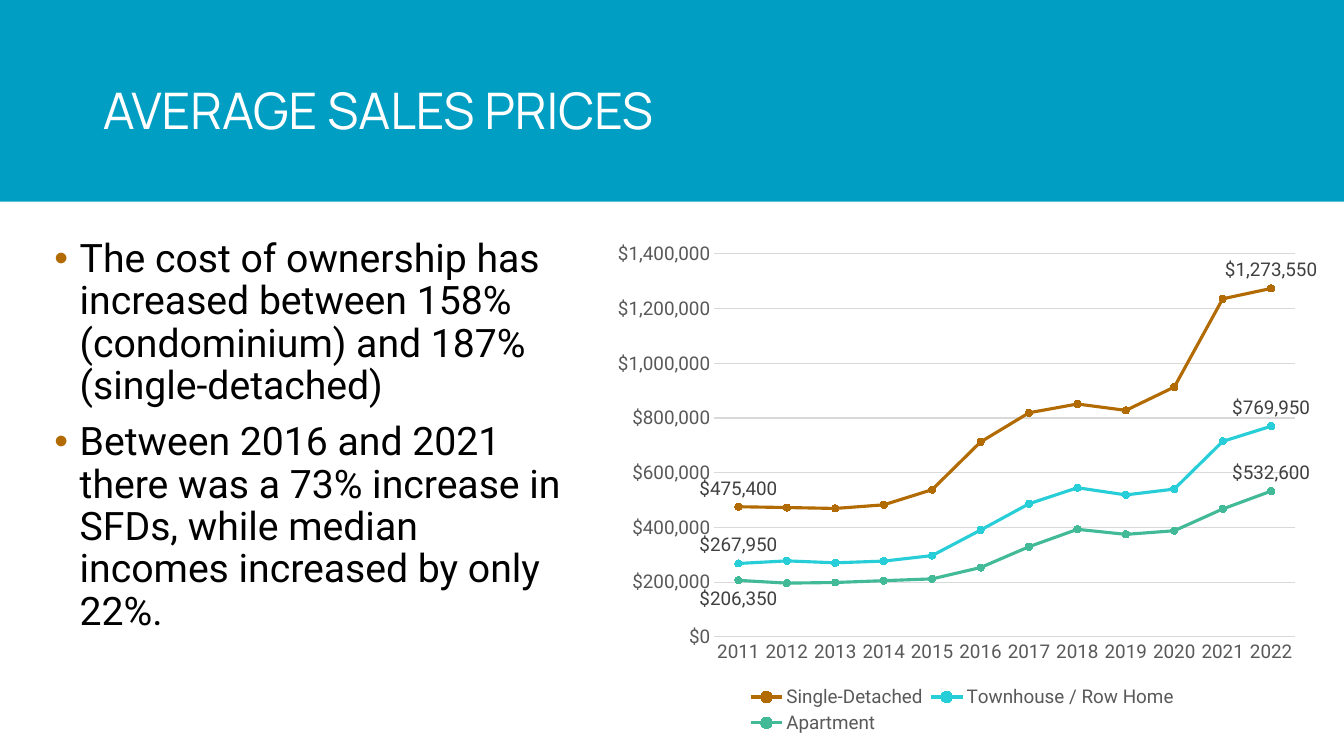
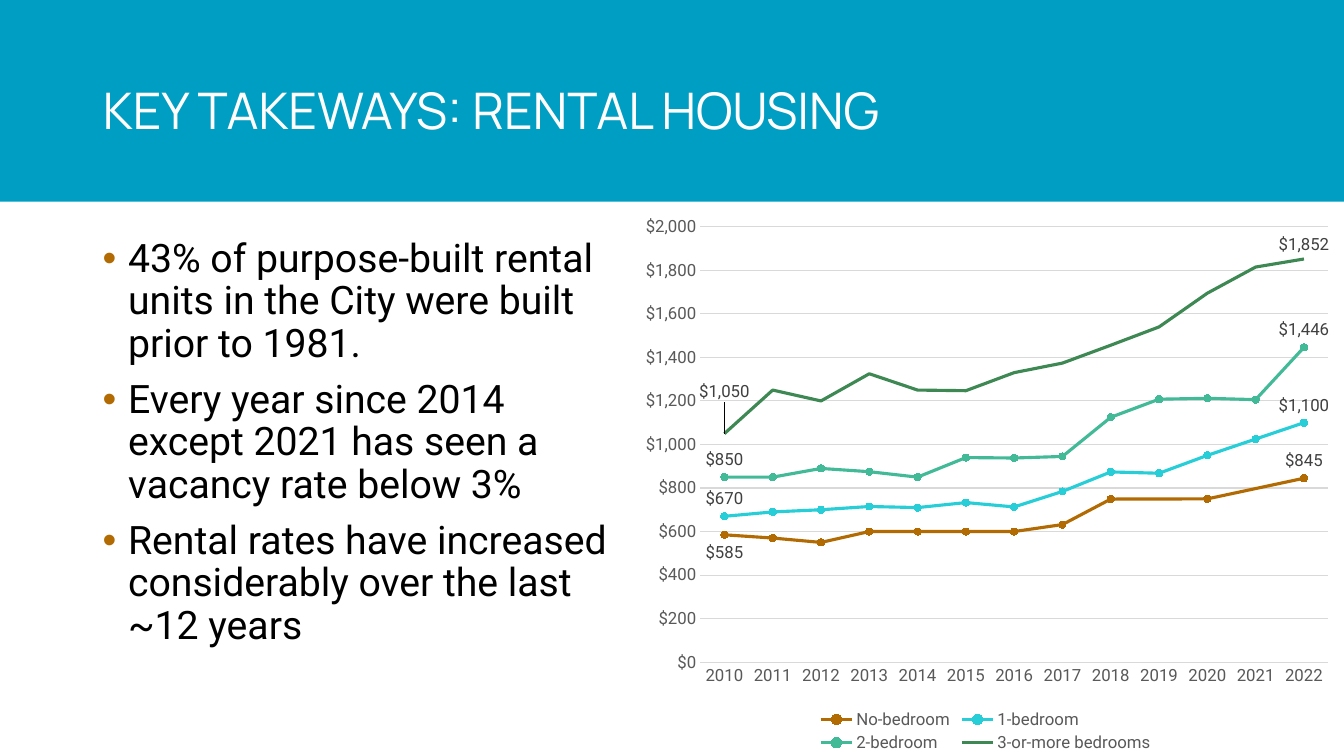
"""Build two housing slides, each with a bullet list and a line chart."""
import dataclasses
import typing

import pptx
import pptx.chart.data
import pptx.dml.color
import pptx.enum.chart
import pptx.enum.shapes
import pptx.enum.text
import pptx.oxml
import pptx.oxml.ns
import pptx.util

Cm = pptx.util.Cm
Pt = pptx.util.Pt
LabelPosition = pptx.enum.chart.XL_LABEL_POSITION
TickMark = pptx.enum.chart.XL_TICK_MARK
MarkerStyle = pptx.enum.chart.XL_MARKER_STYLE

COLORS = {
    "band": "009EC2",
    "title": "FFFFFF",
    "body": "000000",
    "ochre": "B26B02",
    "cyan": "27CED7",
    "teal": "42BA97",
    "green": "3E8853",
    "axis": "595959",
    "label": "404040",
    "grid": "D9D9D9",
}
TITLE_FONT = "Manrope"
BODY_FONT = "Roboto"
DOLLARS = '"$"#,##0'
SLIDE_WIDTH, SLIDE_HEIGHT = 33.87, 19.05


class Box(typing.NamedTuple):
    left: float
    top: float
    width: float
    height: float

    def lengths(self) -> list[pptx.util.Length]:
        return [Cm(value) for value in self]


@dataclasses.dataclass(frozen=True)
class PriceLine:
    name: str
    values: list[int | None]
    color: str
    first_label: LabelPosition = LabelPosition.ABOVE
    first_label_shift: float = 0
    has_markers: bool = True


@dataclasses.dataclass(frozen=True)
class PriceChart:
    box: Box
    plot: Box
    legend: Box
    first_year: int
    maximum: int
    step: int
    size: float
    lines: list[PriceLine]


@dataclasses.dataclass(frozen=True)
class Topic:
    title: str
    title_box: Box
    points_box: Box
    points: list[str]
    prices: PriceChart


TOPICS = [
    Topic(
        "AVERAGE SALES PRICES",
        Box(2.34, 1.02, 22.76, 3.68),
        Box(1.12, 5.89, 13.41, 12.7),
        [
            "The cost of ownership has increased between 158% (condominium) and 187% (single-detached)",
            "Between 2016 and 2021 there was a 73% increase in SFDs, while median incomes increased by only 22%.",
        ],
        PriceChart(
            Box(15.32, 5.89, 17.88, 12.7),
            Box(0.15, 0.04, 0.82, 0.76),
            Box(0.19, 0.89, 0.62, 0.11),
            2011, 1400000, 200000, 13.5,
            [
                PriceLine("Single-Detached",
                          [475400, 472600, 469150, 482450, 537800, 712400, 819050,
                           851150, 827750, 913050, 1235650, 1273550], "ochre"),
                PriceLine("Townhouse / Row Home",
                          [267950, 277600, 270450, 276750, 296900, 390150, 486300,
                           544950, 518650, 540050, 714550, 769950], "cyan"),
                PriceLine("Apartment",
                          [206350, 196200, 198550, 205200, 211750, 253150, 329300,
                           392850, 374450, 387700, 467350, 532600], "teal",
                          first_label=LabelPosition.BELOW),
            ],
        ),
    ),
    Topic(
        "KEY TAKEWAYS: RENTAL HOUSING",
        Box(2.34, 1.02, 20.93, 3.68),
        Box(2.34, 5.89, 13.23, 10.92),
        [
            "43% of purpose-built rental units in the City were built prior to 1981.",
            "Every year since 2014 except 2021 has seen a vacancy rate below 3%",
            "Rental rates have increased considerably over the last ~12 years",
        ],
        PriceChart(
            Box(15.85, 5.16, 17.98, 13.89),
            Box(0.1, 0.04, 0.88, 0.79),
            Box(0.26, 0.91, 0.48, 0.09),
            2010, 2000, 200, 12,
            [
                PriceLine("No-bedroom",
                          [585, 570, 550, 600, 600, 600, 600, 632, 749, None, 750, None, 845],
                          "ochre", first_label=LabelPosition.BELOW),
                PriceLine("1-bedroom",
                          [670, 690, 700, 715, 710, 733, 713, 784, 874, 868, 950, 1025, 1100],
                          "cyan"),
                PriceLine("2-bedroom",
                          [850, 850, 890, 875, 850, 940, 938, 945, 1125, 1208, 1212, 1206, 1446],
                          "teal"),
                PriceLine("3-or-more bedrooms",
                          [1050, 1250, 1200, 1325, 1250, 1247, 1330, 1374, 1456, 1540, 1695, 1815, 1852],
                          "green", first_label_shift=-0.05, has_markers=False),
            ],
        ),
    ),
]


def rgb(name: str) -> pptx.dml.color.RGBColor:
    return pptx.dml.color.RGBColor.from_string(COLORS[name])


def add_child(parent, tag: str, **attributes: str):
    child = parent.makeelement(pptx.oxml.ns.qn(tag), attributes)
    parent.append(child)
    return child


def style_font(font, size: float, color: str, name: str = BODY_FONT) -> None:
    font.size, font.name = Pt(size), name
    font.color.rgb = rgb(color)


def write(paragraph, text: str, *, size: float, color: str, font: str = BODY_FONT,
          bullet: str = "", space_before: float = 0) -> None:
    if bullet:
        properties = paragraph._p.get_or_add_pPr()
        properties.set("marL", str(Cm(0.64)))
        properties.set("indent", str(-Cm(0.64)))
        add_child(add_child(properties, "a:buClr"), "a:srgbClr", val=COLORS["ochre"])
        add_child(properties, "a:buFont", typeface="Arial")
        add_child(properties, "a:buChar", char=bullet)
    paragraph.alignment = pptx.enum.text.PP_ALIGN.LEFT
    paragraph.line_spacing = 0.9
    paragraph.space_before = Pt(space_before)
    run = paragraph.add_run()
    run.text = text
    style_font(run.font, size, color, font)


def set_layout(parent, index: int, **settings: str | float) -> None:
    for old in parent.xpath("./c:layout"):
        parent.remove(old)
    layout = parent.makeelement(pptx.oxml.ns.qn("c:layout"), {})
    manual = add_child(layout, "c:manualLayout")
    for tag, value in settings.items():
        add_child(manual, f"c:{tag}", val=str(value))
    parent.insert(index, layout)


def box_settings(box: Box) -> dict[str, str | float]:
    return {"xMode": "edge", "yMode": "edge",
            "x": box.left, "y": box.top, "w": box.width, "h": box.height}


def add_band(slide) -> None:
    band = slide.shapes.add_shape(pptx.enum.shapes.MSO_SHAPE.RECTANGLE,
                                  *Box(0, 0, SLIDE_WIDTH, 5.08).lengths())
    band.shadow.inherit = False
    band.fill.solid()
    band.fill.fore_color.rgb = rgb("band")
    band.line.fill.background()
    slide.slide_layout.shapes.element.insert(2, band.element)


def add_title(slide, topic: Topic) -> None:
    title = slide.shapes.title
    title.left, title.top, title.width, title.height = topic.title_box.lengths()
    frame = title.text_frame
    frame.auto_size = pptx.enum.text.MSO_AUTO_SIZE.NONE
    frame.vertical_anchor = pptx.enum.text.MSO_ANCHOR.MIDDLE
    write(frame.paragraphs[0], topic.title, size=36, color="title", font=TITLE_FONT)


def add_points(slide, topic: Topic) -> None:
    frame = slide.shapes.add_textbox(*topic.points_box.lengths()).text_frame
    frame.word_wrap = True
    for index, point in enumerate(topic.points):
        paragraph = frame.add_paragraph() if index else frame.paragraphs[0]
        write(paragraph, point, size=28, color="body", bullet="•",
              space_before=10 if index else 0)


def style_line(series, line: PriceLine, size: float) -> None:
    series.smooth = False
    series.format.line.width = Pt(2.25)
    series.format.line.color.rgb = rgb(line.color)
    marker = series.marker
    marker.style = MarkerStyle.CIRCLE if line.has_markers else MarkerStyle.NONE
    if line.has_markers:
        marker.size = 5
        marker.format.fill.solid()
        marker.format.fill.fore_color.rgb = rgb(line.color)
        marker.format.line.color.rgb = rgb(line.color)
    series.data_labels.show_value = False
    ends = {0: line.first_label, len(line.values) - 1: LabelPosition.ABOVE}
    for index, position in ends.items():
        label = series.points[index].data_label
        style_font(label.font, size, "label")
        label.position = position


def style_axes(chart, prices: PriceChart) -> None:
    years, dollars = chart.category_axis, chart.value_axis
    for axis in (years, dollars):
        axis.major_tick_mark = axis.minor_tick_mark = TickMark.NONE
        style_font(axis.tick_labels.font, prices.size, "axis")
    years.format.line.color.rgb = rgb("grid")
    years.format.line.width = Pt(0.75)
    dollars.format.line.fill.background()
    dollars.minimum_scale, dollars.maximum_scale = 0, prices.maximum
    dollars.major_unit = prices.step
    dollars.tick_labels.number_format = DOLLARS
    dollars.tick_labels.number_format_is_linked = False
    dollars.major_gridlines.format.line.color.rgb = rgb("grid")
    dollars.major_gridlines.format.line.width = Pt(0.75)


def add_prices(slide, prices: PriceChart) -> None:
    data = pptx.chart.data.CategoryChartData(number_format=DOLLARS)
    data.categories = [str(prices.first_year + offset)
                       for offset in range(len(prices.lines[0].values))]
    for line in prices.lines:
        data.add_series(line.name, line.values)
    chart = slide.shapes.add_chart(pptx.enum.chart.XL_CHART_TYPE.LINE_MARKERS,
                                   *prices.box.lengths(), data).chart
    chart.has_title = False
    style_font(chart.font, prices.size, "body")
    style_axes(chart, prices)
    plot = chart.plots[0]
    plot.vary_by_categories = False
    chart.has_legend = True
    chart.legend.position = pptx.enum.chart.XL_LEGEND_POSITION.BOTTOM
    chart.legend.include_in_layout = False
    style_font(chart.legend.font, prices.size, "axis")

    root = chart.element
    for order, (series, line) in enumerate(zip(plot.series, prices.lines), start=1):
        style_line(series, line, prices.size)
        if line.first_label_shift:
            first = root.xpath(f".//c:ser[{order}]/c:dLbls/c:dLbl[c:idx/@val='0']")[0]
            set_layout(first, 1, x=0, y=line.first_label_shift)
    set_layout(root.xpath(".//c:plotArea")[0], 0, layoutTarget="inner",
               **box_settings(prices.plot))
    set_layout(root.xpath(".//c:legend")[0], 1, **box_settings(prices.legend))
    for blanks in root.xpath(".//c:dispBlanksAs"):
        blanks.set("val", "span")


def main() -> None:
    deck = pptx.Presentation()
    deck.slide_width, deck.slide_height = Cm(SLIDE_WIDTH), Cm(SLIDE_HEIGHT)
    title_only = deck.slide_layouts[5]
    for index, topic in enumerate(TOPICS):
        slide = deck.slides.add_slide(title_only)
        if index == 0:
            add_band(slide)
        add_title(slide, topic)
        add_prices(slide, topic.prices)
        add_points(slide, topic)
    deck.save("out.pptx")


if __name__ == "__main__":
    main()
